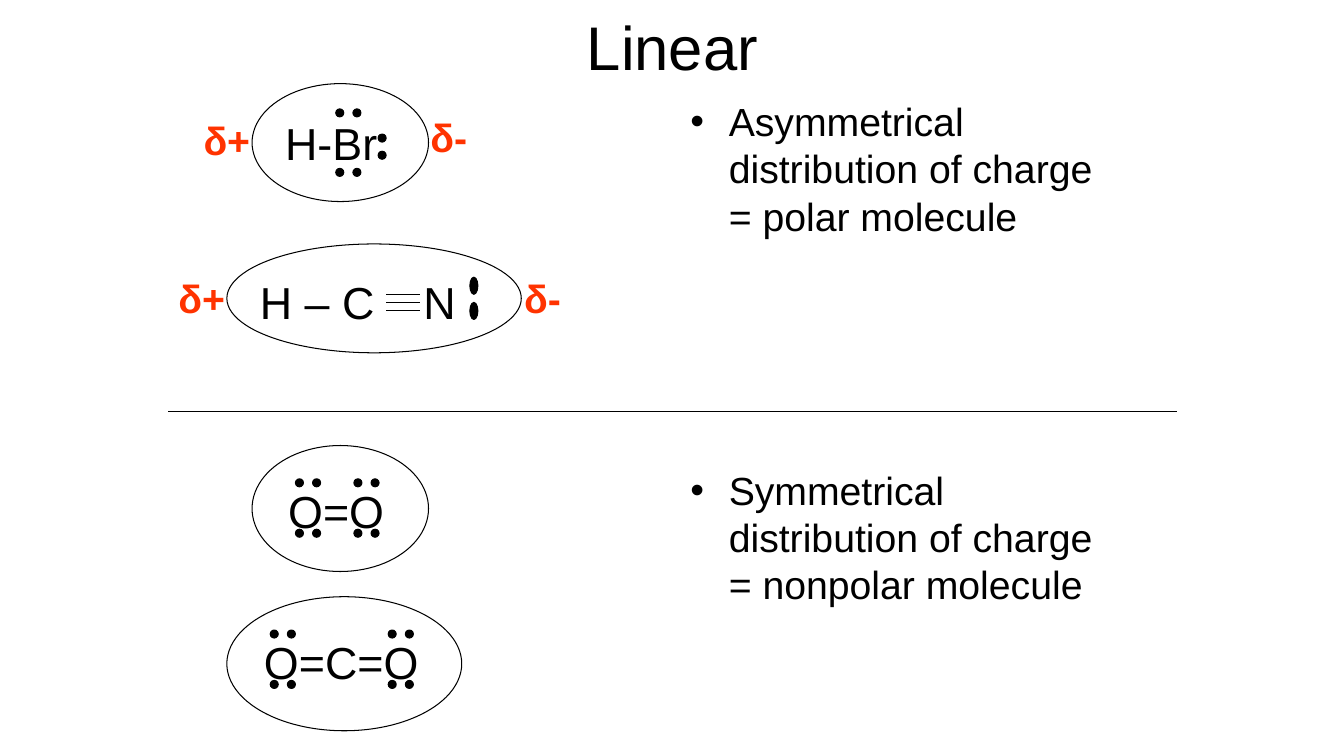
from lxml import etree
from pptx import Presentation
from pptx.dml.color import RGBColor
from pptx.enum.shapes import MSO_CONNECTOR, MSO_SHAPE
from pptx.enum.text import MSO_ANCHOR, PP_ALIGN
from pptx.oxml.ns import qn
from pptx.util import Inches, Pt

OVAL = MSO_SHAPE.OVAL
STRAIGHT = MSO_CONNECTOR.STRAIGHT
MIDDLE = MSO_ANCHOR.MIDDLE
CENTER = PP_ALIGN.CENTER

COLORS = {"ink": "000000", "charge": "FF3300"}
FORMATS = {
    "title": {"size": Pt(44), "name": "Arial"},
    "body": {"size": Pt(28), "name": "Arial"},
    "atoms": {"size": Pt(32), "name": "Arial"},
    "charge": {"size": Pt(28), "name": "Arial", "bold": True},
}

# Content: places are left, top, width, height in inches
TITLE = ("Linear", (2.17, -0.17, 9, 1.25))
BULLETS = [
    ("Asymmetrical distribution of charge = polar molecule", 0.92),
    ("Symmetrical distribution of charge = nonpolar molecule", 4.58),
]
BULLET_LEFT, BULLET_WIDTH, BULLET_HEIGHT, BULLET_INDENT = 6.75, 4.42, 1.6, 0.38
DIVIDER = (1.67, 4.08, 11.67, 4.08)

ROUND, TALL = (0.08, 0.08), (0.08, 0.17)
ACROSS, DOWN, DOWN_TALL = (0.17, 0), (0, 0.17), (0, 0.25)

# Electron pairs: left and top of the first dot, step to the second, dot size
MOLECULES = [
    {
        "outline": (2.5, 0.83, 1.75, 1.17),
        "atoms": [("H-Br", (2.73, 1.1, 1.16, 0.63))],
        "charges": [("δ+", (1.92, 1.1, 0.68, 0.57)), ("δ-", (4.17, 1.08, 0.59, 0.57))],
        "pairs": [(3.33, top, ACROSS, ROUND) for top in (1.08, 1.67)]
        + [(3.75, 1.33, DOWN, ROUND)],
    },
    {
        "outline": (2.25, 2.42, 2.92, 1.08),
        "atoms": [("H – C", (2.48, 2.68, 1.37, 0.63)), ("N", (4.1, 2.68, 0.55, 0.63))],
        "charges": [("δ+", (1.67, 2.67, 0.68, 0.57)), ("δ-", (5.1, 2.67, 0.59, 0.57))],
        "pairs": [(4.66, 2.75, DOWN_TALL, TALL)],
        "bonds": [(3.83, y, 4.17, y) for y in (2.92, 3, 3.08)],
    },
    {
        "outline": (2.5, 4.42, 1.75, 1.25),
        "atoms": [("O=O", (2.76, 4.75, 1.18, 0.63))],
        "pairs": [(left, top, ACROSS, ROUND) for left in (2.93, 3.51) for top in (4.75, 5.25)],
    },
    {
        "outline": (2.25, 5.92, 2.33, 1.33),
        "atoms": [("O=C=O", (2.52, 6.25, 1.76, 0.63))],
        "pairs": [(left, top, ACROSS, ROUND) for left in (2.68, 3.85) for top in (6.25, 6.75)],
    },
]


def color(name):
    return RGBColor.from_string(COLORS[name])


def add_text(shapes, text, place, style, ink="ink", wrap=False):
    box = shapes.add_textbox(*map(Inches, place))
    box.text_frame.word_wrap = wrap
    para = box.text_frame.paragraphs[0]
    span = para.add_run()
    span.text = text
    for key, value in FORMATS[style].items():
        setattr(span.font, key, value)
    span.font.color.rgb = color(ink)
    return box.text_frame, para


def add_oval(shapes, place, filled):
    oval = shapes.add_shape(OVAL, *map(Inches, place))
    oval.shadow.inherit = False
    if filled:
        oval.fill.solid()
        oval.fill.fore_color.rgb = color("ink")
    else:
        oval.fill.background()
    oval.line.color.rgb = color("ink")
    oval.line.width = Pt(0.75)


def add_line(shapes, ends):
    line = shapes.add_connector(STRAIGHT, *map(Inches, ends))
    line.line.color.rgb = color("ink")
    line.line.width = Pt(0.75)
    etree.SubElement(line._element.spPr, qn("a:effectLst"))


def add_bullet(para):
    props = para._p.get_or_add_pPr()
    props.set("marL", str(Inches(BULLET_INDENT)))
    props.set("indent", str(-Inches(BULLET_INDENT)))
    etree.SubElement(props, qn("a:buFont")).set("typeface", "Arial")
    etree.SubElement(props, qn("a:buChar")).set("char", "•")


def add_molecule(page, molecule):
    shapes = page.shapes.add_group_shape().shapes
    for text, place in molecule["atoms"]:
        add_text(shapes, text, place, "atoms")
    for ends in molecule.get("bonds", []):
        add_line(shapes, ends)
    for left, top, (step_x, step_y), size in molecule["pairs"]:
        for i in range(2):
            add_oval(shapes, (left + i * step_x, top + i * step_y, *size), True)
    add_oval(shapes, molecule["outline"], False)
    for text, place in molecule.get("charges", []):
        add_text(shapes, text, place, "charge", "charge")


def main():
    deck = Presentation()
    deck.slide_width, deck.slide_height = Inches(13.33), Inches(7.5)
    page = deck.slides.add_slide(deck.slide_layouts[6])

    # Title
    frame, para = add_text(page.shapes, *TITLE, "title", wrap=True)
    frame.vertical_anchor = MIDDLE
    para.alignment = CENTER

    # Explanations
    for text, top in BULLETS:
        place = (BULLET_LEFT, top, BULLET_WIDTH, BULLET_HEIGHT)
        frame, para = add_text(page.shapes, text, place, "body", wrap=True)
        add_bullet(para)

    # Molecules, polar above the divider and nonpolar below
    add_line(page.shapes, DIVIDER)
    for molecule in MOLECULES:
        add_molecule(page, molecule)

    deck.save("out.pptx")


if __name__ == "__main__":
    main()
